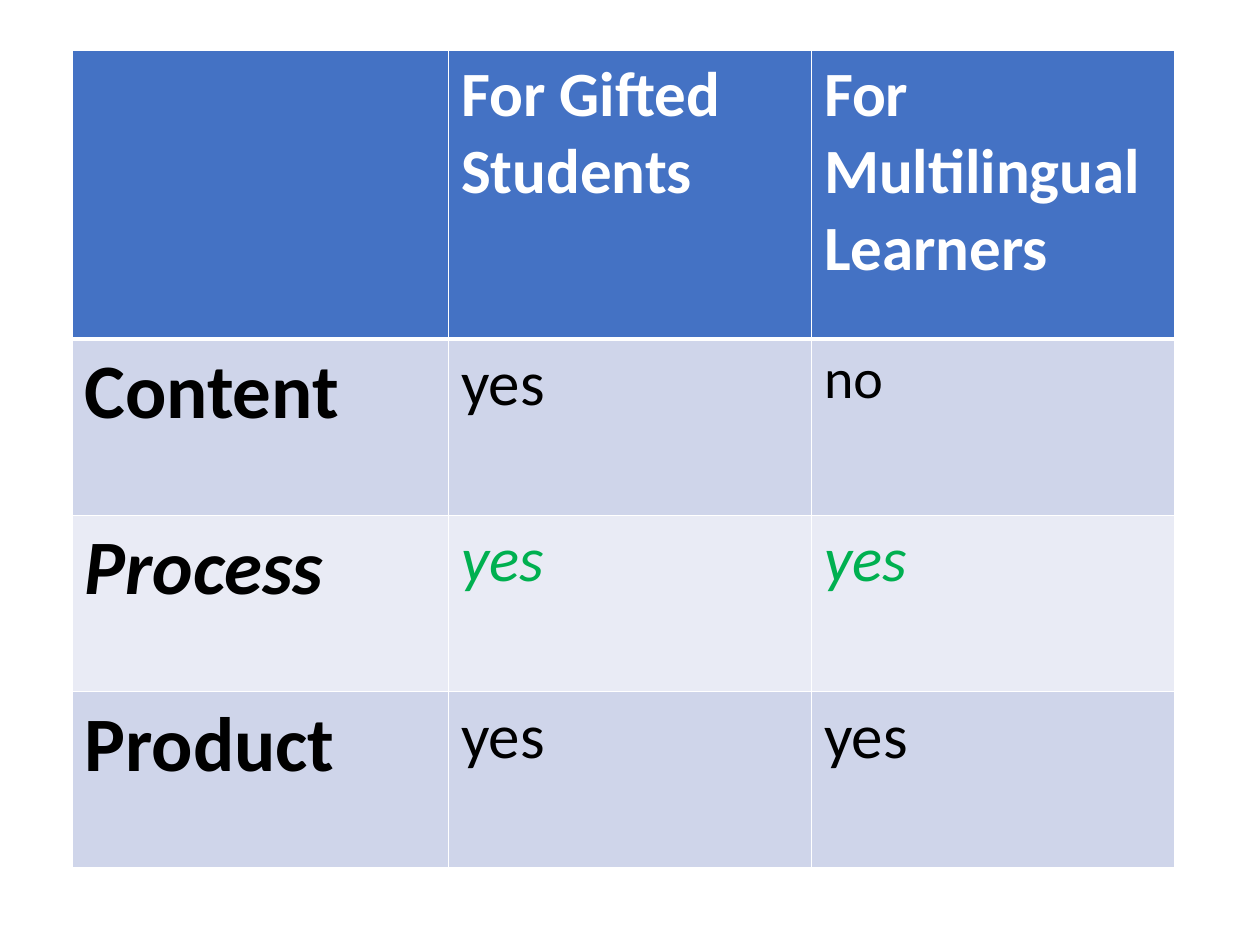
"""Build a slide with a table comparing strategies for two groups of learners."""
import pptx
import pptx.util
import pptx.dml.color
import pptx.oxml
import pptx.oxml.ns

Inches, Pt = pptx.util.Inches, pptx.util.Pt
RGB = pptx.dml.color.RGBColor
WHITE, BLACK = RGB(255, 255, 255), RGB(0, 0, 0)
BLUE, GREEN = RGB(0x44, 0x72, 0xC4), RGB(0x00, 0xB0, 0x50)
DARK, LIGHT = RGB(0xCF, 0xD5, 0xEA), RGB(0xE9, 0xEB, 0xF5)

ROWS = [
    ("", "For Gifted Students", "For Multilingual Learners"),
    ("Content", "yes", "no"),
    ("Process", "yes", "yes"),
    ("Product", "yes", "yes"),
]
WIDTHS = [2.99, 2.88, 2.88]
HEIGHTS = [2.29, 1.4, 1.4, 1.4]
FILLS = [BLUE, DARK, LIGHT, DARK]
HEAD = {"size": Pt(36), "bold": True, "color": WHITE}
LABEL = {"size": Pt(44), "bold": True, "color": BLACK}
BODY = {"size": Pt(36), "bold": False, "color": BLACK}
EXTRA = {
    (1, 2): {"size": Pt(32)},
    (2, 0): {"italic": True},
    (2, 1): {"italic": True, "color": GREEN},
    (2, 2): {"italic": True, "color": GREEN},
}


def style(font, values):
    for name, value in values.items():
        if name == "color":
            font.color.rgb = value
        else:
            setattr(font, name, value)


def edge(cell, side, width):
    ns = pptx.oxml.ns.nsdecls("a")
    line = pptx.oxml.parse_xml(
        f'<a:ln{side} {ns} w="{Pt(width)}"><a:solidFill>'
        f'<a:srgbClr val="{WHITE}"/></a:solidFill></a:ln{side}>')
    return line


def border(cell, row):
    props = cell._tc.get_or_add_tcPr()
    widths = {"L": 1, "R": 1, "T": 3 if row == 1 else 1, "B": 3 if row == 0 else 1}
    for spot, (side, width) in enumerate(widths.items()):
        props.insert(spot, edge(cell, side, width))


def main():
    deck = pptx.Presentation()
    deck.slide_width, deck.slide_height = Inches(10), Inches(7.5)
    slide = deck.slides.add_slide(deck.slide_layouts[6])
    table = slide.shapes.add_table(
        len(ROWS), len(WIDTHS), Inches(0.57), Inches(0.4),
        Inches(sum(WIDTHS)), Inches(sum(HEIGHTS))).table
    for column, width in zip(table.columns, WIDTHS):
        column.width = Inches(width)
    for row, (texts, height) in enumerate(zip(ROWS, HEIGHTS)):
        table.rows[row].height = Inches(height)
        for col, text in enumerate(texts):
            cell = table.cell(row, col)
            cell.fill.solid()
            cell.fill.fore_color.rgb = FILLS[row]
            border(cell, row)
            if text:
                base = HEAD if row == 0 else LABEL if col == 0 else BODY
                run = cell.text_frame.paragraphs[0].add_run()
                run.text = text
                style(run.font, {"name": "Calibri", **base, **EXTRA.get((row, col), {})})
    deck.save("out.pptx")


if __name__ == "__main__":
    main()
